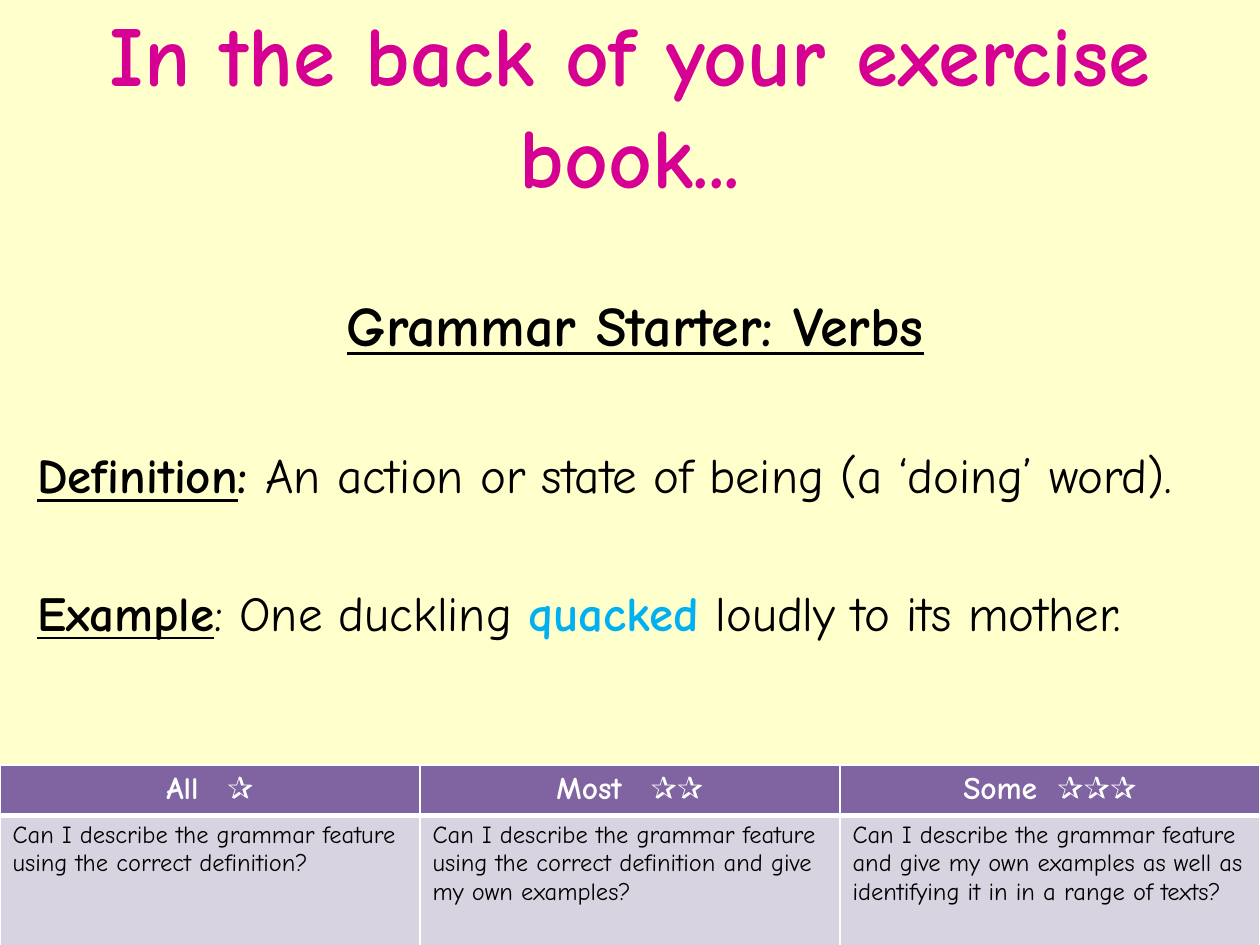
"""Build a grammar starter slide about verbs with a table of success criteria."""
from lxml.etree import SubElement
from pptx import Presentation
from pptx.dml.color import RGBColor
from pptx.enum.text import MSO_ANCHOR as Anchor, PP_ALIGN as Align
from pptx.oxml.ns import qn
from pptx.util import Emu, Pt

SCALE = 914400 // 126
FONT = "Comic Neue"
CREAM = RGBColor(0xFF, 0xFF, 0xCC)
PINK = RGBColor(0xD6, 0x00, 0x93)
BLUE = RGBColor(0x00, 0xB0, 0xF0)
PURPLE = RGBColor(0x80, 0x64, 0xA2)
LILAC = RGBColor(0xD8, 0xD3, 0xE0)
BLACK = RGBColor(0x00, 0x00, 0x00)
WHITE = RGBColor(0xFF, 0xFF, 0xFF)


def px(length):
    return Emu(length * SCALE)


class SlideBuilder:
    def __init__(self, deck):
        self.slide = deck.slides.add_slide(deck.slide_layouts[6])
        self.slide.background.fill.solid()
        self.slide.background.fill.fore_color.rgb = CREAM

    def span(self, para, text, size, color=BLACK, bold=False, underline=False, gap=0):
        run = para.add_run()
        run.text = text
        font = run.font
        font.name, font.size, font.bold, font.underline = FONT, Pt(size), bold, underline
        font.color.rgb = color
        if gap:
            font._element.set("spc", str(gap * 100))

    def text_box(self, left, top, width, height, anchor=Anchor.TOP):
        frame = self.slide.shapes.add_textbox(px(left), px(top), px(width), px(height)).text_frame
        frame.word_wrap = True
        frame.vertical_anchor = anchor
        return frame

    def paragraph(self, para, spans, size, before=0, align=Align.LEFT):
        para.alignment = align
        para.space_before = Pt(before)
        for text, style in spans:
            self.span(para, text, size, **style)

    def paint_cell(self, cell, fill, top, bottom):
        properties = cell._tc.get_or_add_tcPr()
        for side, weight in (("L", 1), ("R", 1), ("T", top), ("B", bottom)):
            line = SubElement(properties, qn(f"a:ln{side}"), w=str(Pt(weight)))
            color = SubElement(line, qn("a:solidFill"))
            SubElement(color, qn("a:srgbClr"), val=str(WHITE))
        cell.fill.solid()
        cell.fill.fore_color.rgb = fill

    def criteria_table(self, left, top, columns, column_width, row_heights):
        width = column_width * len(columns)
        shape = self.slide.shapes.add_table(
            2, len(columns), px(left), px(top), px(width), px(sum(row_heights)))
        table = shape.table
        for row, height in zip(table.rows, row_heights):
            row.height = px(height)
        for index, (level, stars, gap, question) in enumerate(columns):
            table.columns[index].width = px(column_width)
            header, body = table.cell(0, index), table.cell(1, index)
            self.paint_cell(header, PURPLE, 1, 3)
            self.paint_cell(body, LILAC, 3, 1)
            heading = {"color": WHITE, "bold": True}
            self.paragraph(
                header.text_frame.paragraphs[0],
                [(level, heading), (" ", {**heading, "gap": gap}), (stars, heading)],
                18, align=Align.CENTER)
            self.paragraph(body.text_frame.paragraphs[0], [(question, {})], 14)


def main():
    deck = Presentation()
    deck.slide_width, deck.slide_height = px(1260), px(945)
    page = SlideBuilder(deck)

    title = page.text_box(0, 2, 1260, 203, Anchor.MIDDLE)
    page.paragraph(
        title.paragraphs[0],
        [("In the back of your exercise book...", {"color": PINK, "bold": True})],
        48.6, align=Align.CENTER)

    label = {"bold": True, "underline": True}
    body = page.text_box(25, 284, 1221, 610)
    page.paragraph(
        body.paragraphs[0], [("Grammar Starter: Verbs", label)], 32, 6.4, Align.CENTER)
    page.paragraph(body.add_paragraph(), [
        ("Definition", label),
        (": ", {"bold": True}),
        ("An action or state of being (a ‘doing’ word).", {}),
    ], 28, 50)
    page.paragraph(body.add_paragraph(), [
        ("Example", label),
        (": One duckling ", {}),
        ("quacked", {"color": BLUE, "bold": True}),
        (" loudly to its mother.", {}),
    ], 28, 45)

    page.criteria_table(0, 765, [
        ("All", "✰", 10,
         "Can I describe the grammar feature using the correct definition?"),
        ("Most", "✰✰", 10,
         "Can I describe the grammar feature using the correct definition "
         "and give my own examples?"),
        ("Some", "✰✰✰", 5,
         "Can I describe the grammar feature and give my own examples as well as "
         "identifying it in in a range of texts?"),
    ], 420, (42, 130))

    deck.save("out.pptx")


if __name__ == "__main__":
    main()
